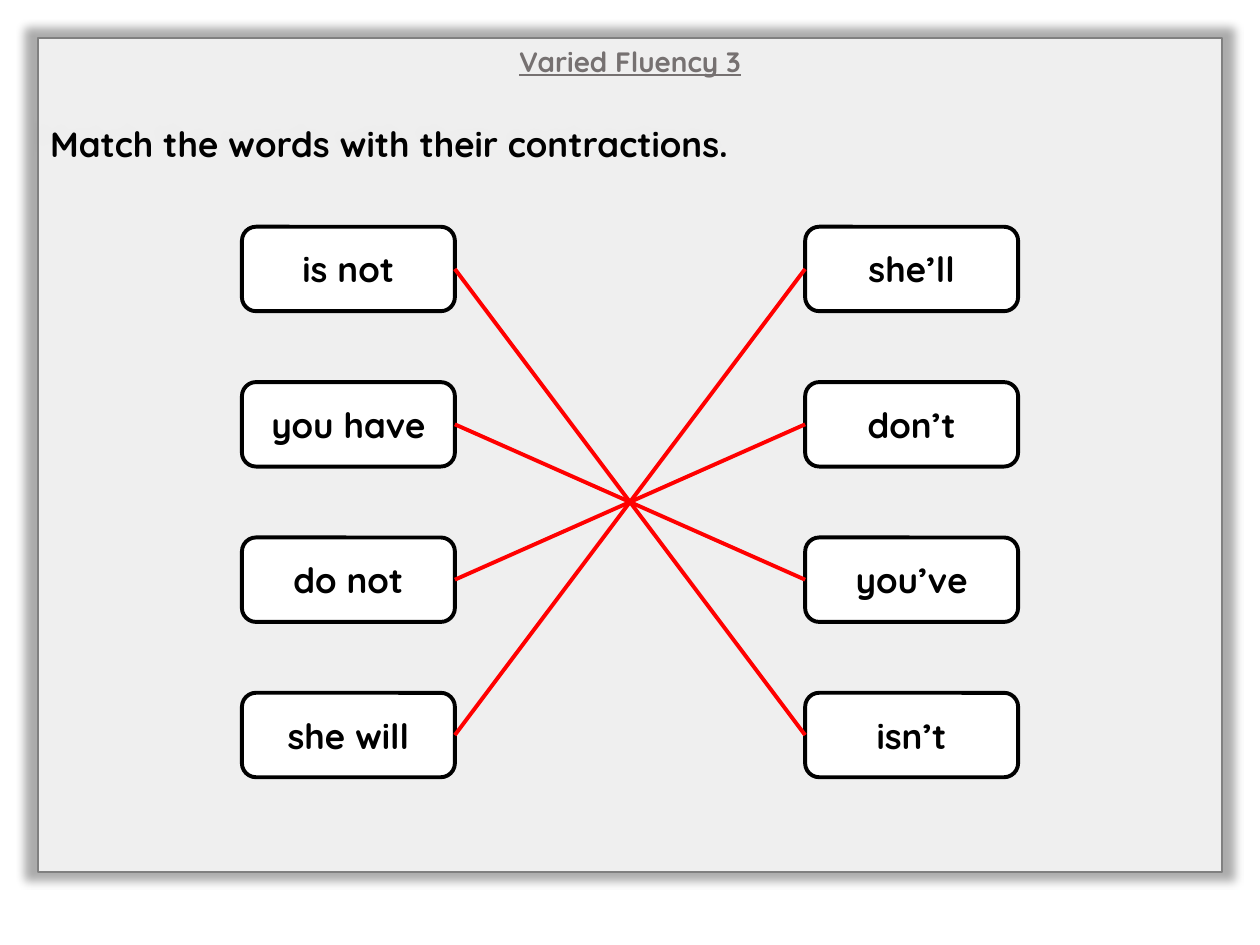
from dataclasses import dataclass

from lxml import etree
from pptx import Presentation
from pptx.dml.color import RGBColor
from pptx.enum import shapes, text
from pptx.oxml import parse_xml
from pptx.oxml.ns import nsdecls, qn
from pptx.util import Inches, Pt


@dataclass(frozen=True)
class Theme:
    font: str = "Quicksand"
    white: RGBColor = RGBColor(0xFF, 0xFF, 0xFF)
    ink: RGBColor = RGBColor(0, 0, 0)
    heading: RGBColor = RGBColor(0x76, 0x71, 0x71)
    border: RGBColor = RGBColor(0x80, 0x80, 0x80)
    match: RGBColor = RGBColor(0xFF, 0, 0)
    heading_size: int = 16
    body_size: int = 20
    panel_line: float = 1
    card_line: float = 2.25


@dataclass(frozen=True)
class Pair:
    words: str
    contraction: str


THEME = Theme()
PAIRS = [
    Pair("is not", "isn’t"),
    Pair("you have", "you’ve"),
    Pair("do not", "don’t"),
    Pair("she will", "she’ll"),
]
CONTRACTION_ORDER = ["she’ll", "don’t", "you’ve", "isn’t"]

PANEL_LEFT, PANEL_TOP, PANEL_WIDTH, PANEL_HEIGHT = 0.3, 0.3, 9.4, 6.62
WORDS_LEFT, CONTRACTIONS_LEFT = 1.92, 6.39
FIRST_ROW, ROW_STEP = 1.8, 1.233
CARD_WIDTH, CARD_HEIGHT = 1.69, 0.67


def write(shape, wording: str, align, anchor, size: int, color: RGBColor,
          underline: bool = False, top_inset: float = 0.05) -> None:
    frame = shape.text_frame
    frame_format = {
        "text": wording,
        "word_wrap": True,
        "auto_size": text.MSO_AUTO_SIZE.NONE,
        "vertical_anchor": anchor,
        "margin_top": Inches(top_inset),
    }
    for name, value in frame_format.items():
        setattr(frame, name, value)
    paragraph = frame.paragraphs[0]
    paragraph.alignment = align
    font = paragraph.runs[0].font
    font_format = {"name": THEME.font, "size": Pt(size), "bold": True, "underline": underline}
    for name, value in font_format.items():
        setattr(font, name, value)
    font.color.rgb = color


def add_box(slide, preset, left: float, top: float, width: float, height: float,
            line_color: RGBColor, line_width: float):
    box = slide.shapes.add_shape(
        preset, Inches(left), Inches(top), Inches(width), Inches(height))
    box.shadow.inherit = False
    box.fill.solid()
    box.fill.fore_color.rgb = THEME.white
    box.line.color.rgb = line_color
    box.line.width = Pt(line_width)
    return box


def add_panel(slide):
    """Add the translucent backing panel with its soft glow-like shadow."""
    panel = add_box(slide, shapes.MSO_SHAPE.RECTANGLE, PANEL_LEFT, PANEL_TOP,
                    PANEL_WIDTH, PANEL_HEIGHT, THEME.border, THEME.panel_line)
    properties = panel._element.spPr
    fill_color = properties.find(qn("a:solidFill")).find(qn("a:srgbClr"))
    etree.SubElement(fill_color, qn("a:alpha"), val="82000")
    properties.find(qn("a:effectLst")).append(parse_xml(
        f'<a:outerShdw {nsdecls("a")} blurRad="63500" sx="102000" sy="102000" '
        'algn="ctr" rotWithShape="0"><a:srgbClr val="000000">'
        '<a:alpha val="40000"/></a:srgbClr></a:outerShdw>'))
    return panel


def add_card(slide, wording: str, left: float, row: int):
    card = add_box(slide, shapes.MSO_SHAPE.ROUNDED_RECTANGLE, left,
                   FIRST_ROW + row * ROW_STEP, CARD_WIDTH, CARD_HEIGHT,
                   THEME.ink, THEME.card_line)
    write(card, wording, text.PP_ALIGN.CENTER, text.MSO_ANCHOR.MIDDLE,
          THEME.body_size, THEME.ink)
    return card


def add_match(slide, words_card, contraction_card) -> None:
    line = slide.shapes.add_connector(shapes.MSO_CONNECTOR.STRAIGHT, 0, 0, 0, 0)
    line.begin_connect(words_card, 3)
    line.end_connect(contraction_card, 1)
    line.line.color.rgb = THEME.match
    line.line.width = Pt(THEME.card_line)
    etree.SubElement(line._element.spPr, qn("a:effectLst"))


def main() -> None:
    deck = Presentation()
    deck.slide_width, deck.slide_height = Inches(10), Inches(7.5)
    slide = deck.slides.add_slide(deck.slide_layouts[5])

    panel = add_panel(slide)
    write(panel, "Match the words with their contractions.", text.PP_ALIGN.LEFT,
          text.MSO_ANCHOR.TOP, THEME.body_size, THEME.ink, top_inset=0.67)

    heading = slide.shapes.title
    place = {"left": PANEL_LEFT, "top": PANEL_TOP, "width": PANEL_WIDTH, "height": 0.4}
    for name, value in place.items():
        setattr(heading, name, Inches(value))
    write(heading, "Varied Fluency 3", text.PP_ALIGN.CENTER, text.MSO_ANCHOR.TOP,
          THEME.heading_size, THEME.heading, underline=True)
    panel._element.addnext(heading._element)

    words_cards = [add_card(slide, pair.words, WORDS_LEFT, row)
                   for row, pair in enumerate(PAIRS)]
    contraction_cards = {wording: add_card(slide, wording, CONTRACTIONS_LEFT, row)
                         for row, wording in enumerate(CONTRACTION_ORDER)}
    for pair, words_card in zip(PAIRS, words_cards):
        add_match(slide, words_card, contraction_cards[pair.contraction])

    deck.save("out.pptx")


if __name__ == "__main__":
    main()
